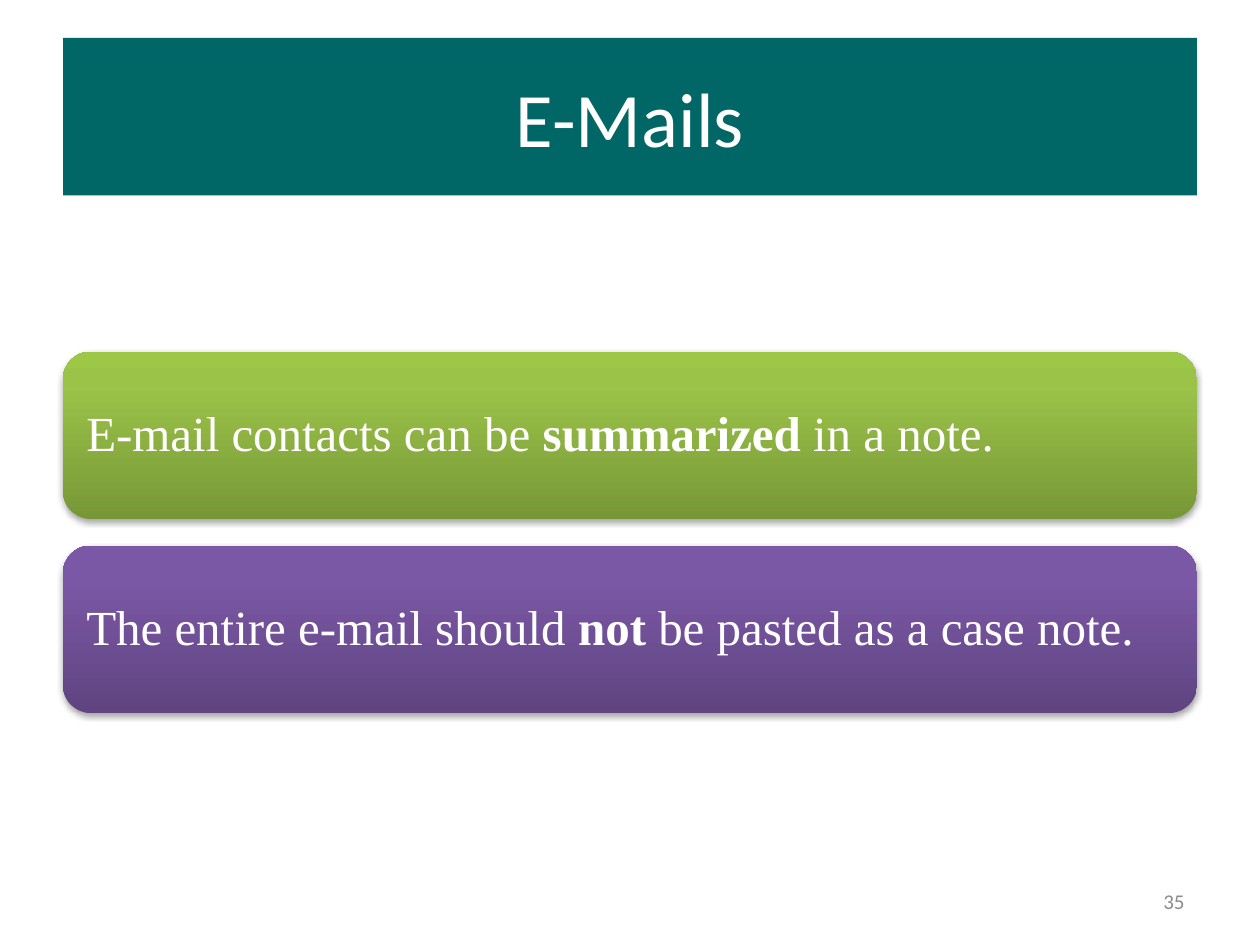
"""Build the E-Mails slide with a title banner and two message cards."""
import copy
from typing import NamedTuple

import pptx
import pptx.dml.color
import pptx.enum.shapes
import pptx.enum.text
import pptx.oxml
import pptx.oxml.ns
import pptx.slide
import pptx.text.text
import pptx.util

Inches = pptx.util.Inches
RGBColor = pptx.dml.color.RGBColor

TEAL = RGBColor(0x00, 0x66, 0x66)
WHITE = RGBColor(0xFF, 0xFF, 0xFF)
GRAY = RGBColor(0x8C, 0x8C, 0x8C)
GREENS = (RGBColor(0x77, 0x97, 0x37), RGBColor(0x9B, 0xC3, 0x48), RGBColor(0x9D, 0xC7, 0x46))
PURPLES = (RGBColor(0x5F, 0x44, 0x80), RGBColor(0x7B, 0x58, 0xA6), RGBColor(0x7C, 0x57, 0xA8))
STOP_POSITIONS = (0, 0.8, 1)

MARGIN = 0.5
CONTENT_WIDTH = 9
CARD_TOP = 2.79
CARD_HEIGHT = 1.33
CARD_PITCH = 1.54
TEXT_INSET = 0.065

SHADOW_XML = (
    f'<a:effectLst {pptx.oxml.ns.nsdecls("a")}>'
    '<a:outerShdw blurRad="40000" dist="23000" dir="5400000" rotWithShape="0">'
    '<a:srgbClr val="000000"><a:alpha val="35000"/></a:srgbClr>'
    '</a:outerShdw></a:effectLst>'
)


class TextRun(NamedTuple):
    text: str
    bold: bool = False


class Card(NamedTuple):
    colors: tuple[RGBColor, ...]
    runs: tuple[TextRun, ...]


CARDS = (
    Card(GREENS, (TextRun("E-mail contacts can be "), TextRun("summarized", True),
                  TextRun(" in a note."))),
    Card(PURPLES, (TextRun("The entire e-mail should "), TextRun("not", True),
                   TextRun(" be pasted as a case note."))),
)


def add_run(paragraph: pptx.text.text._Paragraph, text_run: TextRun,
            font_name: str, size: float, color: RGBColor) -> None:
    run = paragraph.add_run()
    run.text = text_run.text
    run.font.name = font_name
    run.font.size = pptx.util.Pt(size)
    run.font.bold = text_run.bold
    run.font.color.rgb = color


def add_title(slide: pptx.slide.Slide) -> None:
    title = slide.shapes.title
    title.left, title.top = Inches(MARGIN), Inches(0.3)
    title.width, title.height = Inches(CONTENT_WIDTH), Inches(1.25)
    title.fill.solid()
    title.fill.fore_color.rgb = TEAL
    title.text_frame.vertical_anchor = pptx.enum.text.MSO_ANCHOR.MIDDLE
    paragraph = title.text_frame.paragraphs[0]
    paragraph.alignment = pptx.enum.text.PP_ALIGN.CENTER
    add_run(paragraph, TextRun("E-Mails"), "Calibri", 44, WHITE)


def add_card(slide: pptx.slide.Slide, card: Card, top: float) -> None:
    group = slide.shapes.add_group_shape()
    shape = group.shapes.add_shape(
        pptx.enum.shapes.MSO_SHAPE.ROUNDED_RECTANGLE,
        Inches(MARGIN), Inches(top), Inches(CONTENT_WIDTH), Inches(CARD_HEIGHT))
    shape.line.fill.background()
    shape.fill.gradient()
    shape.fill.gradient_angle = 90
    stop_list = shape.element.spPr.find(".//" + pptx.oxml.ns.qn("a:gsLst"))
    stop_list.append(copy.deepcopy(stop_list[-1]))
    for stop, position, color in zip(shape.fill.gradient_stops, STOP_POSITIONS, card.colors):
        stop.position = position
        stop.color.rgb = color
    shape.element.spPr.append(pptx.oxml.parse_xml(SHADOW_XML))

    text_box = group.shapes.add_textbox(
        Inches(MARGIN + TEXT_INSET), Inches(top + TEXT_INSET),
        Inches(CONTENT_WIDTH - 2 * TEXT_INSET), Inches(CARD_HEIGHT - 2 * TEXT_INSET))
    frame = text_box.text_frame
    frame.word_wrap = True
    frame.vertical_anchor = pptx.enum.text.MSO_ANCHOR.MIDDLE
    frame.margin_left = frame.margin_right = Inches(0.12)
    frame.margin_top = frame.margin_bottom = Inches(0.12)
    paragraph = frame.paragraphs[0]
    paragraph.line_spacing = 0.9
    for text_run in card.runs:
        add_run(paragraph, text_run, "Times New Roman", 28, WHITE)


def add_slide_number(slide: pptx.slide.Slide) -> None:
    text_box = slide.shapes.add_textbox(Inches(7.17), Inches(6.95), Inches(2.33), Inches(0.4))
    frame = text_box.text_frame
    frame.word_wrap = True
    frame.vertical_anchor = pptx.enum.text.MSO_ANCHOR.MIDDLE
    paragraph = frame.paragraphs[0]
    paragraph.alignment = pptx.enum.text.PP_ALIGN.RIGHT
    add_run(paragraph, TextRun("35"), "Calibri", 12, GRAY)


def main() -> None:
    presentation = pptx.Presentation()
    presentation.slide_width = Inches(10)
    presentation.slide_height = Inches(7.5)
    slide = presentation.slides.add_slide(presentation.slide_layouts.get_by_name("Title Only"))
    add_title(slide)
    for index, card in enumerate(CARDS):
        add_card(slide, card, CARD_TOP + index * CARD_PITCH)
    add_slide_number(slide)
    presentation.save("out.pptx")


if __name__ == "__main__":
    main()
